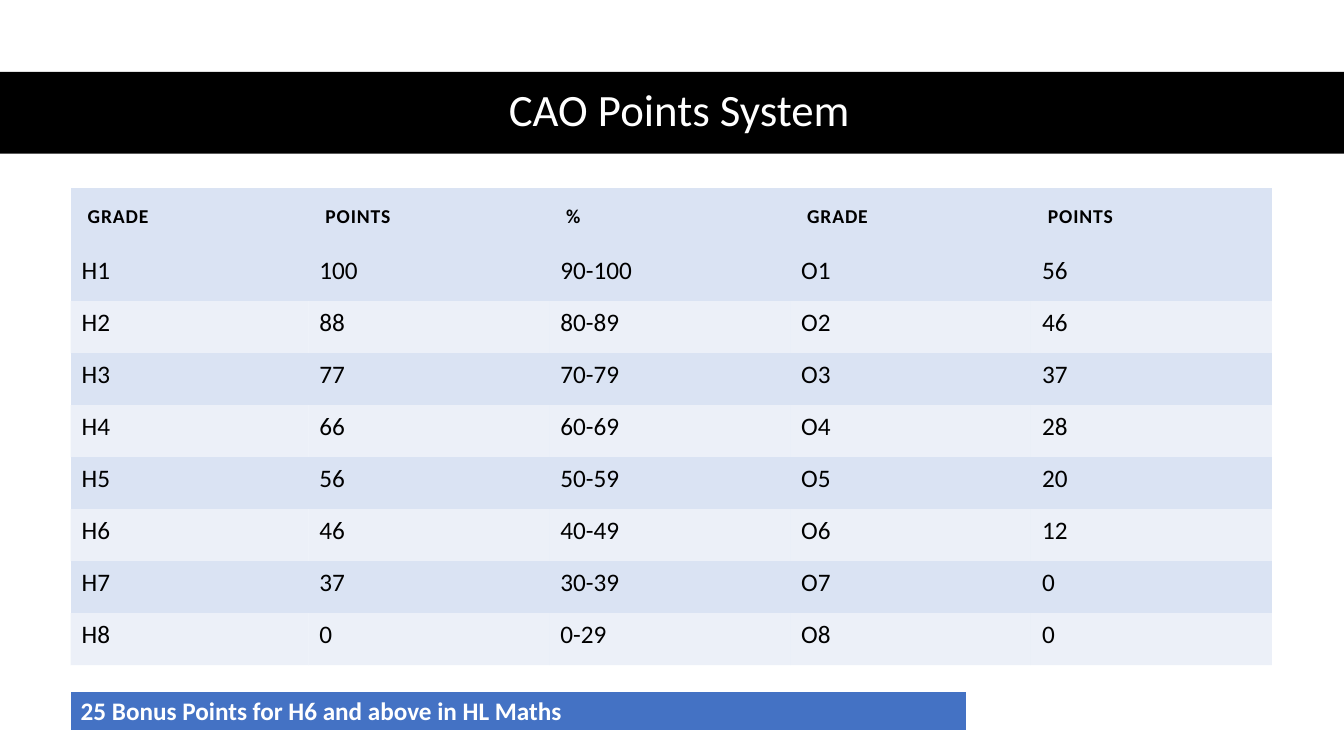
from pptx import Presentation
from pptx.dml.color import RGBColor
from pptx.enum.shapes import MSO_SHAPE as SHAPE
from pptx.enum.text import MSO_ANCHOR as ANCHOR, PP_ALIGN as ALIGN
from pptx.oxml.ns import qn
from pptx.oxml.xmlchemy import OxmlElement as Element
from pptx.util import Cm, Pt

BLACK, WHITE, BLUE, PALE = "000000", "FFFFFF", "4472C4", "DAE3F3"
NO_GRID = "{2D5ABB26-0587-4C30-8999-92F81FD0307C}"
HEADINGS = ["GRADE", "POINTS", "%", "GRADE", "POINTS"]
GRADES = [
    ("100", "90-100", "56"),
    ("88", "80-89", "46"),
    ("77", "70-79", "37"),
    ("66", "60-69", "28"),
    ("56", "50-59", "20"),
    ("46", "40-49", "12"),
    ("37", "30-39", "0"),
    ("0", "0-29", "0"),
]


def paint(fill, colour):
    fill.solid()
    fill.fore_color.rgb = RGBColor.from_string(colour)


class Deck:
    font = "Calibri"

    def __init__(self):
        self.prs = Presentation()
        self.prs.slide_width, self.prs.slide_height = Cm(33.87), Cm(19.05)
        self.s = self.prs.slides.add_slide(self.prs.slide_layouts[5])

    def run(self, p, text, size, colour, bold=False):
        r = p.add_run()
        r.text = text
        r.font.name, r.font.size, r.font.bold = self.font, Pt(size), bold
        r.font.color.rgb = RGBColor.from_string(colour)
        return r

    def title(self, text, x, y, w, h):
        sp = self.s.shapes.title
        sp.left, sp.top, sp.width, sp.height = Cm(x), Cm(y), Cm(w), Cm(h)
        tf = sp.text_frame
        tf.vertical_anchor = ANCHOR.MIDDLE
        p = tf.paragraphs[0]
        p.alignment, p.line_spacing = ALIGN.CENTER, 0.9
        self.run(p, text, 32, WHITE)

    def band(self, x, y, w, h, colour):
        """Add a plain bar behind the title."""
        sp = self.s.shapes.add_shape(SHAPE.RECTANGLE, Cm(x), Cm(y), Cm(w), Cm(h))
        paint(sp.fill, colour)
        sp.line.fill.background()
        sp.shadow.inherit = False
        self.s.shapes.title._element.addprevious(sp._element)

    def table(self, x, y, widths, heights):
        frame = self.s.shapes.add_table(len(heights), len(widths), Cm(x), Cm(y),
                                        Cm(sum(widths)), Cm(sum(heights)))
        tbl = frame.table
        tbl.first_row = tbl.horz_banding = False
        tbl._tbl.tblPr.find(qn("a:tableStyleId")).text = NO_GRID
        for column, width in zip(tbl.columns, widths):
            column.width = Cm(width)
        for row, height in zip(tbl.rows, heights):
            row.height = Cm(height)
        return tbl

    def cell(self, cell, text, size, colour, fill, bold=False, insets=None):
        if insets:
            (cell.margin_left, cell.margin_top,
             cell.margin_right, cell.margin_bottom) = map(Cm, insets)
        paint(cell.fill, fill)
        return self.run(cell.text_frame.paragraphs[0], text, size, colour, bold)

    def fade(self, cell, percent):
        """Set the opacity of a cell's fill."""
        alpha = Element("a:alpha")
        alpha.set("val", str(percent * 1000))
        cell._tc.tcPr.find(".//" + qn("a:srgbClr")).append(alpha)

    def borders(self, cell, colour, **widths):
        for i, (side, width) in enumerate(widths.items()):
            ln = Element("a:ln" + side)
            ln.set("w", str(Pt(width)))
            fill, clr = Element("a:solidFill"), Element("a:srgbClr")
            clr.set("val", colour)
            fill.append(clr)
            ln.append(fill)
            cell._tc.get_or_add_tcPr().insert(i, ln)


def main():
    deck = Deck()
    deck.title("CAO Points System", 1.55, 1.78, 31.14, 2.06)
    deck.band(0, 1.81, 33.87, 2.06, BLACK)

    points = deck.table(1.78, 4.73, [5.99] + [6.07] * 4, [1.55] + [1.31] * 8)
    for c, heading in enumerate(HEADINGS):
        r = deck.cell(points.cell(0, c), heading, 14, BLACK, PALE, True, [0.43] * 4)
        r.font._element.set("spc", "60")
    for n, (higher, percent, ordinary) in enumerate(GRADES, 1):
        for c, text in enumerate([f"H{n}", higher, percent, f"O{n}", ordinary]):
            cell = points.cell(n, c)
            deck.cell(cell, text, 18, BLACK, PALE, insets=(0.28, 0.15, 0.28, 0.28))
            if n % 2 == 0:
                deck.fade(cell, 50)

    bonus = deck.table(1.78, 17.42, [22.58], [1.03]).cell(0, 0)
    deck.cell(bonus, "25 Bonus Points for H6 and above in HL Maths", 18, WHITE, BLUE, True)
    deck.borders(bonus, WHITE, L=1, R=1, T=1, B=3)

    deck.prs.save("out.pptx")


if __name__ == "__main__":
    main()
